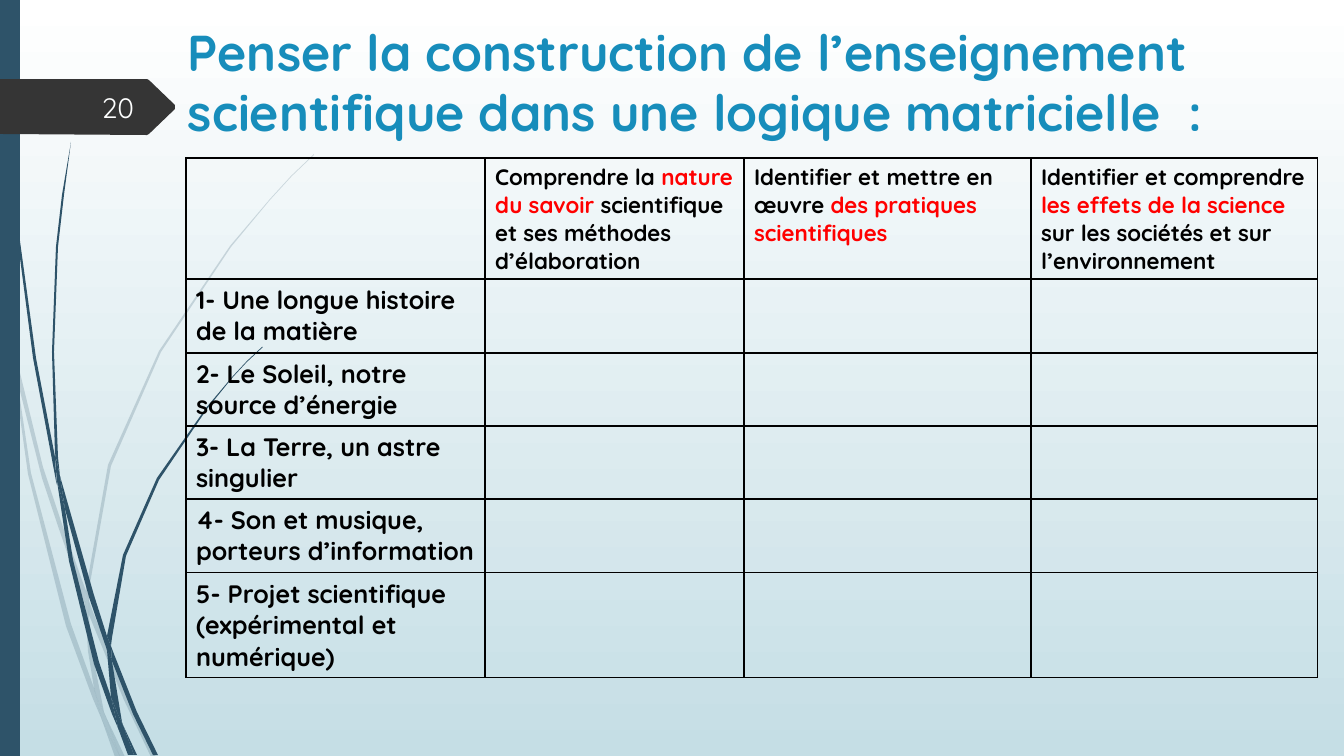
from dataclasses import dataclass

from lxml.etree import SubElement
from pptx import Presentation
from pptx.dml.color import RGBColor
from pptx.enum.shapes import MSO_SHAPE
from pptx.enum.text import MSO_ANCHOR, PP_ALIGN
from pptx.oxml.ns import qn
from pptx.util import Pt

TITLE = "Penser la construction de l’enseignement scientifique dans une logique matricielle  :"
PAGE_NUMBER = "20"
SKILLS = [
    [("Comprendre la ", "ink"), ("nature du savoir", "accent"),
     (" scientifique et ses méthodes d’élaboration", "ink")],
    [("Identifier et mettre en œuvre ", "ink"), ("des pratiques scientifiques", "accent")],
    [("Identifier et comprendre ", "ink"), ("les effets de la science ", "accent"),
     ("sur les sociétés et sur l’environnement", "ink")],
]
THEMES = [
    "1- Une longue histoire de la matière",
    "2- Le Soleil, notre source d’énergie",
    "3- La Terre, un astre singulier",
    "4- Son et musique, porteurs d’information",
    "5- Projet scientifique (expérimental et numérique)",
]
COLUMN_WIDTHS = [299, 259, 287, 287]
ROW_HEIGHTS = [121, 74, 73, 73, 74, 105]

PALE_BLADES = [
    [(11, 353), (9, 325), (0, 284), (0, 301), (10, 347)],
    [(58, 526), (85, 604), (86, 591), (62, 524), (43, 467), (14, 348), (17, 379), (42, 478)],
    [(93, 612), (89, 601), (89, 615), (124, 700), (151, 757), (156, 757), (128, 698)],
    [(120, 757), (125, 757), (106, 717)],
    [(94, 688), (71, 624), (31, 473), (17, 379), (11, 353), (28, 474), (66, 626),
     (93, 699), (102, 720), (100, 713)],
    [(85, 604), (88, 651), (94, 688), (97, 698), (106, 717), (104, 712), (92, 651),
     (89, 615), (89, 613)],
    [(89, 589), (111, 466), (161, 352), (231, 247), (270, 200), (292, 176), (314, 155),
     (314, 154), (291, 176), (270, 199), (230, 246), (159, 351), (108, 465), (86, 589),
     (86, 591), (89, 601)],
    [(102, 720), (115, 757), (120, 757)],
    [(89, 613), (89, 615), (89, 601), (86, 591), (85, 604)],
    [(97, 698), (94, 688), (100, 713), (102, 720), (120, 757), (106, 717)],
]
DARK_BLADES = [
    [(7, 111), (17, 235), (33, 358), (56, 481), (57, 485), (55, 461), (55, 457),
     (36, 358), (19, 234), (8, 110), (5, 48), (4, 0), (3, 0), (4, 48)],
    [(89, 597), (107, 650), (107, 636), (94, 595), (60, 476), (65, 509)],
    [(114, 654), (111, 646), (112, 661), (133, 714), (153, 755), (158, 755), (137, 712)],
    [(111, 697), (99, 662), (73, 560), (65, 509), (57, 481), (69, 561), (94, 664),
     (112, 714), (118, 728), (117, 723)],
    [(60, 476), (58, 457), (54, 352), (58, 247), (64, 195), (71, 142), (62, 195),
     (56, 247), (52, 352), (55, 453)],
    [(134, 755), (137, 755), (123, 725)],
    [(57, 481), (65, 509), (60, 476), (55, 453), (55, 457)],
    [(112, 638), (126, 556), (159, 480), (207, 409), (233, 377), (247, 362), (263, 347),
     (262, 347), (247, 361), (233, 376), (206, 408), (157, 478), (123, 555), (107, 636),
     (111, 646)],
    [(118, 728), (128, 755), (132, 755)],
    [(107, 650), (111, 697), (117, 712), (123, 725), (122, 722), (112, 661), (110, 656)],
    [(107, 650), (110, 656), (112, 661), (111, 646), (107, 636)],
    [(117, 712), (111, 697), (117, 723), (118, 728), (131, 755), (134, 755), (123, 725)],
]


@dataclass(frozen=True)
class Theme:
    font: str = "Quicksand"
    ink: str = "000000"
    accent: str = "FF0000"
    title: str = "178DBB"
    number: str = "FEFFFF"
    blade: str = "2E5369"
    tag: str = "353535"
    sky: tuple = ("FFFFFF", "C5DEE5")
    title_size: int = 36
    number_size: int = 20
    skill_size: int = 16
    theme_size: int = 18


THEME = Theme()
SCALE = 914400 / 100.8


def px(value):
    return round(value * SCALE)


def color(code):
    return RGBColor.from_string(code)


def paint(shape, code):
    shape.shadow.inherit = False
    shape.fill.solid()
    shape.fill.fore_color.rgb = color(code)
    shape.line.fill.background()


def style(span, size, code, bold=True):
    span.font.name = THEME.font
    span.font.size = Pt(size)
    span.font.bold = bold
    span.font.color.rgb = color(code)


def add_outline(page, points, code, opacity=100):
    builder = page.shapes.build_freeform(*points[0], scale=SCALE)
    builder.add_line_segments(points[1:], close=True)
    outline = builder.convert_to_shape()
    paint(outline, code)
    if opacity < 100:
        fill = outline.fill._xPr.find(qn("a:solidFill"))
        SubElement(fill[0], qn("a:alpha"), val=str(opacity * 1000))


def add_text(page, bounds, text, size, code, bold, align, anchor):
    box = page.shapes.add_textbox(*map(px, bounds))
    frame = box.text_frame
    frame.word_wrap = True
    frame.vertical_anchor = anchor
    frame.text = text
    para = frame.paragraphs[0]
    para.alignment = align
    style(para.runs[0], size, code, bold)


def frame_cell(cell):
    properties = cell._tc.get_or_add_tcPr()
    for side in ("lnL", "lnR", "lnT", "lnB"):
        line = SubElement(properties, qn(f"a:{side}"), w=str(Pt(1)))
        fill = SubElement(line, qn("a:solidFill"))
        SubElement(fill, qn("a:srgbClr"), val=THEME.ink)
    cell.fill.background()


def write_cell(cell, spans, size):
    para = cell.text_frame.paragraphs[0]
    for text, role in spans:
        span = para.add_run()
        span.text = text
        style(span, size, getattr(THEME, role))


def add_matrix(page):
    table = page.shapes.add_table(
        len(ROW_HEIGHTS), len(COLUMN_WIDTHS), px(186), px(158),
        px(sum(COLUMN_WIDTHS)), px(sum(ROW_HEIGHTS))).table
    table.first_row = False
    table.horz_banding = False
    for column, width in zip(table.columns, COLUMN_WIDTHS):
        column.width = px(width)
    for row, height in zip(table.rows, ROW_HEIGHTS):
        row.height = px(height)
    for cell in table.iter_cells():
        frame_cell(cell)
    for index, spans in enumerate(SKILLS, 1):
        write_cell(table.cell(0, index), spans, THEME.skill_size)
    for index, text in enumerate(THEMES, 1):
        write_cell(table.cell(index, 0), [(text, "ink")], THEME.theme_size)


def main():
    deck = Presentation()
    deck.slide_width, deck.slide_height = px(1344), px(756)
    page = deck.slides.add_slide(deck.slide_layouts[6])
    sky = page.background.fill
    sky.gradient()
    sky.gradient_angle = 270
    for stop, code in zip(sky.gradient_stops, THEME.sky):
        stop.color.rgb = color(code)
    for blades, opacity in ((PALE_BLADES, 20), (DARK_BLADES, 100)):
        for points in blades:
            add_outline(page, points, THEME.blade, opacity)
    bar = page.shapes.add_shape(MSO_SHAPE.RECTANGLE, 0, 0, px(20), px(756))
    paint(bar, THEME.blade)
    add_outline(page, [(0, 79), (147, 79), (149, 80), (175, 105), (175, 109),
                       (149, 134), (147, 135), (0, 134)], THEME.tag)
    add_text(page, (178, 16, 1108, 142), TITLE, THEME.title_size, THEME.title,
             True, PP_ALIGN.LEFT, MSO_ANCHOR.TOP)
    add_text(page, (58, 87, 86, 40), PAGE_NUMBER, THEME.number_size, THEME.number,
             False, PP_ALIGN.RIGHT, MSO_ANCHOR.MIDDLE)
    add_matrix(page)
    deck.save("out.pptx")


if __name__ == "__main__":
    main()
